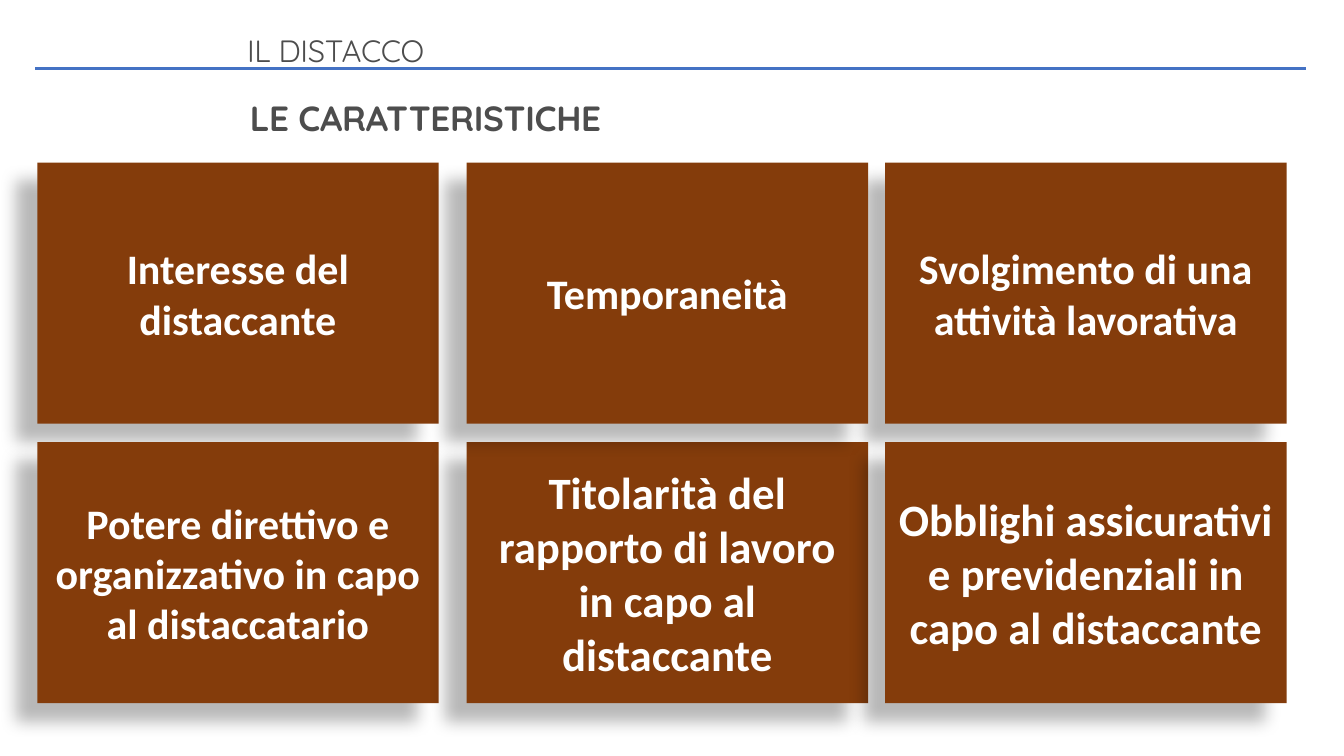
import dataclasses
import lxml.etree
import pptx
import pptx.dml.color
import pptx.enum.shapes
import pptx.enum.text
import pptx.oxml.ns
import pptx.util

Pt = pptx.util.Pt
Align = pptx.enum.text.PP_ALIGN
Anchor = pptx.enum.text.MSO_ANCHOR
qn = pptx.oxml.ns.qn


@dataclasses.dataclass(frozen=True)
class Theme:
    """Colours, fonts, type sizes and the card grid in percent of the slide."""
    ink: str = "4D4D4D"
    rule: str = "4472C4"
    card: str = "843C0B"
    pale: str = "FFFFFF"
    shade: str = "000000"
    head: str = "Quicksand"
    body: str = "Calibri"
    title: int = 22
    sub: int = 25
    small: int = 30
    large: int = 32
    cols: tuple = (2.78, 34.73, 65.87)
    rows: tuple = (21.5, 58.5)
    wide: float = 29.86
    high: float = 34.53


class Page:
    """Draws the elements of one slide in one theme."""

    def __init__(self, deck, theme):
        """Add a title-only slide to the deck."""
        self.deck, self.theme = deck, theme
        self.slide = deck.slides.add_slide(deck.slide_layouts[5])

    def place(self, left, top, wide, high):
        """Turn percentages of the slide into lengths."""
        w, h = self.deck.slide_width, self.deck.slide_height
        return [int(p * size / 100) for p, size in zip((left, top, wide, high), (w, h, w, h))]

    def color(self, name):
        """Give a colour object for a hex value."""
        return pptx.dml.color.RGBColor.from_string(name)

    def label(self, shape, text, face, size, color, bold, align, anchor):
        """Put one styled paragraph in a shape."""
        frame = shape.text_frame
        frame.text = text
        frame.word_wrap = True
        frame.auto_size = pptx.enum.text.MSO_AUTO_SIZE.NONE
        frame.vertical_anchor = anchor
        para = frame.paragraphs[0]
        para.alignment = align
        font = para.runs[0].font
        font.name, font.size, font.bold = face, Pt(size), bold
        font.color.rgb = self.color(color)
        return para

    def head(self, shape, text, size, bold):
        """Set a heading with tight lines and letters."""
        t = self.theme
        para = self.label(shape, text, t.head, size, t.ink, bold, Align.LEFT, Anchor.TOP)
        para.line_spacing = 0.9
        para.space_before = Pt(0)
        para.runs[0].font._element.set("spc", "-20")

    def title(self, text, *spot):
        """Move and format the title placeholder."""
        shape = self.slide.shapes.title
        shape.left, shape.top, shape.width, shape.height = self.place(*spot)
        self.head(shape, text, self.theme.title, False)

    def sub(self, text, *spot):
        """Add the bold heading below the title."""
        shape = self.slide.shapes.add_textbox(*self.place(*spot))
        self.head(shape, text, self.theme.sub, True)

    def rule(self, left, right, top):
        """Draw a horizontal rule."""
        x, y, end, _ = self.place(left, top, right, 0)
        kind = pptx.enum.shapes.MSO_CONNECTOR.STRAIGHT
        line = self.slide.shapes.add_connector(kind, x, y, end, y)
        line.line.color.rgb = self.color(self.theme.rule)
        line.line.width = Pt(2.25)
        lxml.etree.SubElement(line._element.spPr, qn("a:effectLst"))

    def shade(self, shape):
        """Cast a soft shadow to the lower left."""
        shape.shadow.inherit = False
        glow = shape._element.spPr.find(qn("a:effectLst"))
        cast = lxml.etree.SubElement(
            glow, qn("a:outerShdw"), blurRad=str(Pt(11.8)), dist=str(Pt(19.7)),
            dir=str(141 * 60000), algn="tr", rotWithShape="0")
        tint = lxml.etree.SubElement(cast, qn("a:srgbClr"), val=self.theme.shade)
        lxml.etree.SubElement(tint, qn("a:alpha"), val="28000")

    def card(self, text, col, row, size):
        """Add a shadowed card in a cell of the grid."""
        t = self.theme
        spot = self.place(t.cols[col], t.rows[row], t.wide, t.high)
        shape = self.slide.shapes.add_shape(pptx.enum.shapes.MSO_SHAPE.RECTANGLE, *spot)
        shape.fill.solid()
        shape.fill.fore_color.rgb = self.color(t.card)
        shape.line.fill.background()
        self.shade(shape)
        self.label(shape, text, t.body, size, t.pale, True, Align.CENTER, Anchor.MIDDLE)


def main():
    """Build and save the slide."""
    deck = pptx.Presentation()
    deck.slide_width = pptx.util.Inches(13.33)
    deck.slide_height = pptx.util.Inches(7.5)
    theme = Theme()
    page = Page(deck, theme)
    page.rule(2.63, 97.15, 9.07)
    page.title("IL DISTACCO", 17.63, 4.13, 64.82, 4.4)
    page.sub("LE CARATTERISTICHE", 17.85, 12.8, 64.82, 4.4)
    cards = (
        ("Interesse del distaccante", 0, 0, theme.small),
        ("Potere direttivo e organizzativo in capo al distaccatario", 0, 1, theme.small),
        ("Svolgimento di una attività lavorativa", 2, 0, theme.small),
        ("Titolarità del rapporto di lavoro in capo al distaccante", 1, 1, theme.large),
        ("Temporaneità", 1, 0, theme.small),
        ("Obblighi assicurativi e previdenziali in capo al distaccante", 2, 1, theme.large),
    )
    for card in cards:
        page.card(*card)
    deck.save("out.pptx")


if __name__ == "__main__":
    main()
